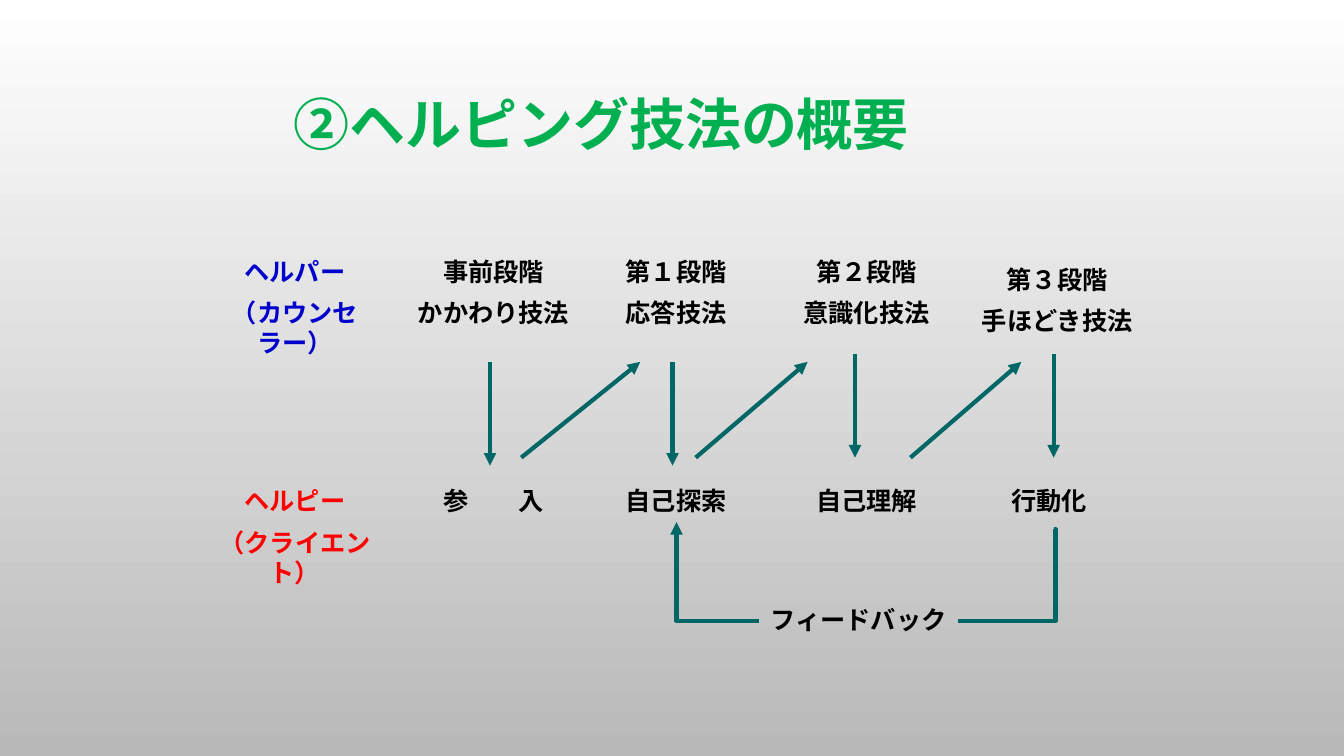
from lxml import etree
from pptx import Presentation, util as u
from pptx.dml.color import RGBColor
from pptx.enum import lang, shapes, text
from pptx.oxml.ns import qn

TITLE = "②ヘルピング技法の概要"
BLACK, BLUE, RED, GREEN, TEAL = "000000", "0000CC", "FF0000", "00B050", "006666"

# Columns: left edge of each; every label has the same width.
ROLE, PRE, FIRST, SECOND, THIRD = 1.94, 3.91, 5.72, 7.61, 9.5
LABEL_WIDTH = 1.97
# Rows: top of the helper labels, top of the helpee labels, feedback line.
HELPER, HELPEE, FEEDBACK = 2.49, 4.77, 6.16
NUDGE = 0.08  # small offset of the last stage

LABELS = [  # left, top, lines, colour
    (ROLE, HELPER, ["ヘルパー", "（カウンセラー）"], BLUE),
    (PRE, HELPER, ["事前段階", "かかわり技法"], BLACK),
    (FIRST, HELPER, ["第１段階", "応答技法"], BLACK),
    (SECOND, HELPER, ["第２段階", "意識化技法"], BLACK),
    (THIRD, HELPER + NUDGE, ["第３段階", "手ほどき技法"], BLACK),
    (ROLE, HELPEE, ["ヘルピー", "（クライエント）"], RED),
    (PRE, HELPEE, ["参　　入"], BLACK),
    (FIRST, HELPEE, ["自己探索"], BLACK),
    (SECOND, HELPEE, ["自己理解"], BLACK),
    (THIRD - NUDGE, HELPEE, ["行動化"], BLACK),
    (SECOND - NUDGE, 5.95, ["フィードバック"], BLACK),
]

ARROW_TOP, ARROW_HEIGHT = 3.59, 1.03
RISE_BOTTOM = 4.54
DOWN = [(4.86, ARROW_TOP), (6.67, ARROW_TOP),
        (8.48, ARROW_TOP - NUDGE), (10.45, ARROW_TOP - NUDGE)]
RISING = [(5.17, 6.35), (6.9, 8.01), (9.03, 10.13)]  # from x, to x


def rgb(colour):
    return RGBColor.from_string(colour)


def add_run(paragraph, words, font_name, size, colour):
    run = paragraph.add_run()
    run.text = words
    font = run.font
    font.name, font.size, font.bold = font_name, u.Pt(size), True
    font.color.rgb = rgb(colour)
    font.language_id = lang.MSO_LANGUAGE_ID.JAPANESE
    latin = run._r.rPr.find(qn("a:latin"))
    east_asian = etree.Element(qn("a:ea"), typeface=font_name)
    latin.addnext(east_asian)


def add_label(left, top, lines, colour):
    height = 0.4 + 0.45 * (len(lines) - 1)
    box = slide.shapes.add_textbox(*map(u.Inches, (left, top, LABEL_WIDTH, height)))
    frame = box.text_frame
    frame.word_wrap = True
    for i, line in enumerate(lines):
        paragraph = frame.add_paragraph() if i else frame.paragraphs[0]
        paragraph.alignment = text.PP_ALIGN.CENTER
        if i:
            paragraph.space_before = u.Pt(8)
        add_run(paragraph, line, "Arial", 18, colour)


def add_line(start, end, kind=shapes.MSO_CONNECTOR.STRAIGHT, arrow=True):
    connector = slide.shapes.add_connector(kind, *map(u.Inches, (*start, *end)))
    connector.line.color.rgb = rgb(TEAL)
    connector.line.width = u.Pt(3)
    properties = connector._element.spPr
    if arrow:
        etree.SubElement(properties.find(qn("a:ln")), qn("a:tailEnd"), type="triangle")
    etree.SubElement(properties, qn("a:effectLst"))
    return connector


deck = Presentation()
deck.slide_width, deck.slide_height = u.Inches(13.33), u.Inches(7.5)
slide = deck.slides.add_slide(deck.slide_layouts[5])

backdrop = slide.background.fill
backdrop.gradient()
backdrop.gradient_angle = 270
for stop, position, colour in zip(backdrop.gradient_stops, (0, 1), ("FFFFFF", "B9B9B9")):
    stop.position, stop.color.rgb = position, rgb(colour)

title = slide.shapes.title
title.left, title.top, title.width, title.height = map(u.Inches, (2.81, 0.84, 6.54, 0.77))
title.text_frame.auto_size = text.MSO_AUTO_SIZE.NONE
title.text_frame.vertical_anchor = text.MSO_ANCHOR.MIDDLE
heading = title.text_frame.paragraphs[0]
heading.alignment = text.PP_ALIGN.LEFT
add_run(heading, TITLE, "Noto Sans CJK JP", 40, GREEN)

for label in LABELS:
    add_label(*label)
for x, top in DOWN:
    add_line((x, top), (x, top + ARROW_HEIGHT))
for x_from, x_to in RISING:
    add_line((x_from, RISE_BOTTOM), (x_to, ARROW_TOP))

# Feedback: down from the last helpee step, then up into the first.
ELBOW = shapes.MSO_CONNECTOR.ELBOW
feedback_out = add_line((10.45, 5.25), (THIRD, FEEDBACK), ELBOW, arrow=False)
guides = feedback_out._element.spPr.prstGeom.get_or_add_avLst()
etree.SubElement(guides, qn("a:gd"), name="adj1", fmla="val -2000")
feedback_in = add_line((SECOND - NUDGE, FEEDBACK), (6.71, 5.18), ELBOW)
feedback_in._element.spPr.prstGeom.set("prst", "bentConnector2")

deck.save("out.pptx")
